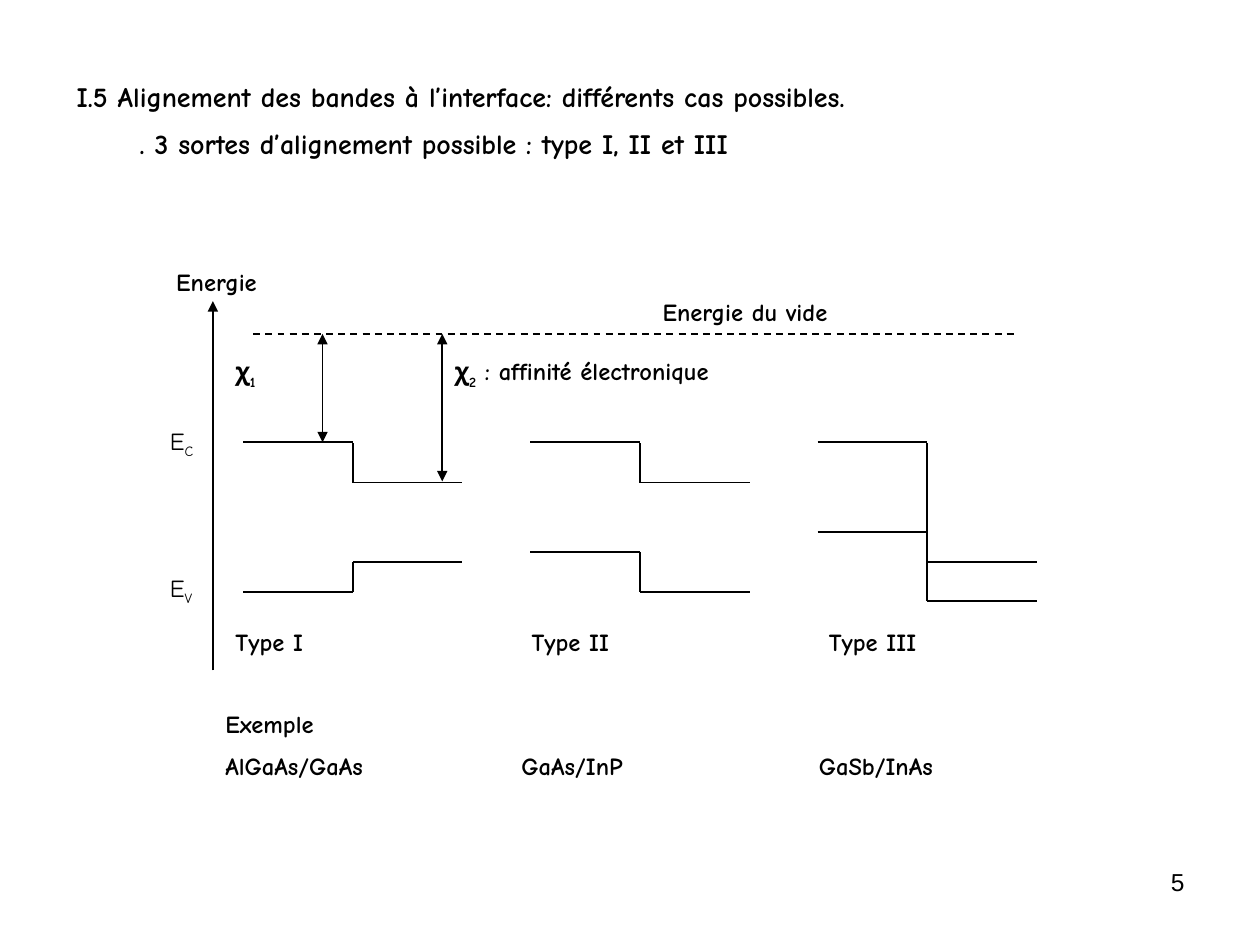
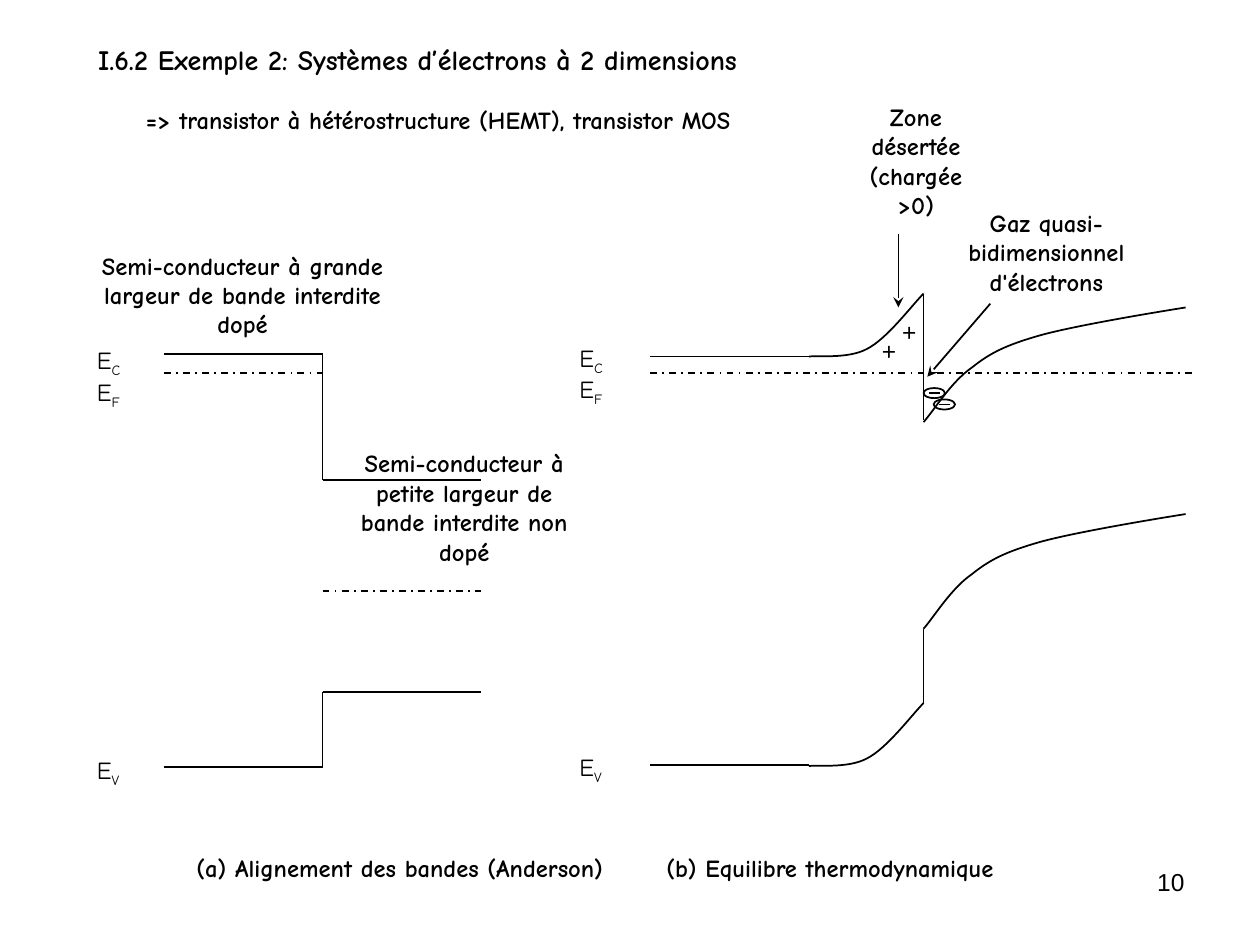
from lxml.etree import SubElement
from pptx import Presentation
from pptx.dml.color import RGBColor
from pptx.enum.dml import MSO_LINE
from pptx.enum.shapes import MSO_CONNECTOR, MSO_SHAPE
from pptx.enum.text import MSO_AUTO_SIZE as AutoSize, PP_ALIGN as Align
from pptx.oxml.ns import qn
from pptx.util import Pt

PX = 9144  # EMU per px, 100 px to the inch
COLORS = {"ink": "000000"}
INK = RGBColor.from_string(COLORS["ink"])
BODY_FONT = "Comic Neue"
PLAIN_FONT = "Arial"
TITLE_SIZE = 16
BODY_SIZE = 14
LINE_WIDTH = Pt(1)


def emu(*lengths):
    return [round(length * PX) for length in lengths]


def add_text(page, place, *lines, size=BODY_SIZE, font=BODY_FONT, bold=True,
             align=Align.LEFT, margin=5, gap=None, indents=(), hanging=0, tabs=(),
             grow=True):
    """Add one paragraph per line; parts between underscores are subscripts.

    gap is the space in points before each later paragraph, half a line if None.
    size may be a tuple, one value per line.
    """
    box = page.shapes.add_textbox(*emu(*place))
    frame = box.text_frame
    frame.word_wrap = True
    frame.auto_size = AutoSize.SHAPE_TO_FIT_TEXT if grow else AutoSize.NONE
    frame.margin_left = frame.margin_right = 2 * margin * PX
    frame.margin_top = frame.margin_bottom = margin * PX
    sizes = size if isinstance(size, tuple) else (size,) * len(lines)
    for index, (line, points) in enumerate(zip(lines, sizes)):
        para = frame.add_paragraph() if index else frame.paragraphs[0]
        para.alignment = align
        properties = para._p.get_or_add_pPr()
        if index and gap is None:
            space = SubElement(properties, qn("a:spcBef"))
            SubElement(space, qn("a:spcPct"), val="50000")
        elif index:
            para.space_before = Pt(gap)
        if indents:
            properties.set("marL", str(indents[index] * PX))
            properties.set("indent", str(-hanging * PX))
        if tabs:
            stops = SubElement(properties, qn("a:tabLst"))
            for tab in tabs:
                SubElement(stops, qn("a:tab"), pos=str(tab * PX), algn="l")
        for part, words in enumerate(line.split("_")):
            if not words:
                continue
            span = para.add_run()
            span.text = words
            span.font.size = Pt(points)
            span.font.name = font
            span.font.bold = bold
            span.font.color.rgb = INK
            if part % 2:
                span._r.get_or_add_rPr().set("baseline", "-25000")


def add_page_number(page, number):
    add_text(page, (717, 683, 233, 52), str(number), font=PLAIN_FONT, bold=False,
             align=Align.RIGHT, grow=False)


def add_level_label(page, left, top, letter):
    add_text(page, (left, top, 42, 33), f"E_{letter}_", bold=False)


def ink_line(line):
    line.color.rgb = INK
    line.width = LINE_WIDTH


def add_line(page, start, end, dash=None, head=None, tail=None):
    connector = page.shapes.add_connector(MSO_CONNECTOR.STRAIGHT, *emu(*start, *end))
    ink_line(connector.line)
    if dash:
        connector.line.dash_style = dash
    properties = connector._element.spPr
    outline = properties.find(qn("a:ln"))
    for tag, kind in (("a:headEnd", head), ("a:tailEnd", tail)):
        if kind:
            SubElement(outline, qn(tag), type=kind)
    SubElement(properties, qn("a:effectLst"))


def add_level(page, left, right, y, dash=None):
    add_line(page, (left, y), (right, y), dash)


def add_wall(page, x, top, bottom):
    add_line(page, (x, top), (x, bottom))


def add_bands(page, left, width, conduction, valence, walls):
    """Draw both band edges on each side of an interface, and its walls."""
    interface = left + width
    for y_left, y_right in (conduction, valence):
        add_level(page, left, interface, y_left)
        add_level(page, interface, interface + width, y_right)
    for top, bottom in walls:
        add_wall(page, interface, top, bottom)


def add_curve(page, knots, drop=0):
    """Draw chained cubic curves through every third knot, moved down by drop."""
    start, *rest = [emu(x, y + drop) for x, y in knots]
    builder = page.shapes.build_freeform(*start)
    builder.add_line_segments(rest, close=False)
    curve = builder.convert_to_shape()
    curve.shadow.inherit = False
    curve.fill.background()
    ink_line(curve.line)
    outline = next(curve._element.iter(qn("a:path")))
    segments = outline.findall(qn("a:lnTo"))
    for first in range(0, len(segments), 3):
        cubic = SubElement(outline, qn("a:cubicBezTo"))
        for segment in segments[first:first + 3]:
            cubic.append(segment[0])
            outline.remove(segment)


def add_electron(page, left, top):
    ellipse = page.shapes.add_shape(MSO_SHAPE.OVAL, *emu(left, top, 17, 8))
    ellipse.shadow.inherit = False
    ellipse.fill.background()
    ink_line(ellipse.line)
    add_level(page, left + 4, left + 13, top + 4)


def add_ion(page, left, top):
    add_text(page, (left, top, 14, 23), "+", font=PLAIN_FONT, bold=False, margin=0)


def build_alignment_types(page):
    add_page_number(page, 5)
    add_text(page, (51, 58, 835, 77),
             "I.5 Alignement des bandes à l’interface: différents cas possibles.",
             ". 3 sortes d’alignement possible : type I, II et III",
             size=TITLE_SIZE, indents=(0, 50))

    add_line(page, (169, 532), (169, 239), tail="triangle")
    add_text(page, (130, 207, 95, 33), "Energie")
    add_level(page, 201, 807, 265, MSO_LINE.DASH)
    add_text(page, (516, 231, 252, 33), "Energie du vide")
    add_level_label(page, 125, 333, "C")
    add_level_label(page, 125, 450, "V")

    types = [((351, 383), (470, 446), [(352, 383), (446, 470)]),
             ((351, 383), (438, 470), [(352, 383), (438, 470)]),
             ((351, 446), (422, 477), [(352, 477)])]
    for column, bands in enumerate(types):
        add_bands(page, 193 + 228 * column, 87, *bands)

    for x, bottom in ((256, 351), (351, 382)):
        add_line(page, (x, bottom), (x, 265), head="triangle", tail="triangle")
    add_text(page, (177, 278, 142, 34), "χ_1_")
    add_text(page, (351, 278, 291, 34), "χ_2_ : affinité électronique")

    columns = (235, 471)
    add_text(page, (177, 493, 638, 33), "Type I\tType II\tType III", tabs=columns)
    add_text(page, (169, 558, 614, 68), "Exemple",
             "AlGaAs/GaAs\tGaAs/InP\tGaSb/InAs", tabs=columns)


def build_electron_gas(page):
    add_page_number(page, 10)
    add_text(page, (68, 29, 874, 84),
             "I.6.2 Exemple 2: Systèmes d’électrons à 2 dimensions",
             "\t=> transistor à hétérostructure (HEMT), transistor MOS",
             size=(TITLE_SIZE, BODY_SIZE), align=Align.JUSTIFY, gap=16.5,
             indents=(38, 38), hanging=38)

    for left, rise in ((67, 0), (450, 2)):
        for letter, top in (("C", 269), ("F", 294), ("V", 594)):
            add_level_label(page, left, top - rise, letter)

    # (a) separate materials
    add_bands(page, 130, 126, (281, 381), (609, 549), [(281, 381), (549, 608)])
    add_level(page, 130, 256, 296, MSO_LINE.DASH_DOT)
    add_level(page, 256, 382, 469, MSO_LINE.DASH_DOT)
    add_text(page, (69, 194, 247, 81),
             "Semi-conducteur à grande largeur de bande interdite dopé", align=Align.CENTER)
    add_text(page, (260, 351, 217, 104),
             "Semi-conducteur à petite largeur de bande interdite non dopé",
             align=Align.CENTER)

    # (b) equilibrium
    depletion = [(642, 283), (649, 282), (673, 285), (688, 277),
                 (704, 269), (724, 242), (733, 233)]
    well = [(941, 244), (922, 247), (855, 258), (826, 266),
            (798, 274), (786, 280), (771, 292), (755, 303), (741, 326), (733, 335)]
    for level, drop_left, drop_right in ((283, 0, 0), (607, 325, 164)):
        add_level(page, 516, 642, level)
        add_curve(page, depletion, drop_left)
        add_curve(page, well, drop_right)
    add_wall(page, 733, 233, 333)
    add_wall(page, 733, 499, 558)
    add_level(page, 516, 949, 296, MSO_LINE.DASH_DOT)

    add_text(page, (673, 76, 108, 104), "Zone désertée (chargée >0)", align=Align.CENTER)
    add_line(page, (713, 186), (713, 244), tail="stealth")
    add_text(page, (744, 160, 173, 81), "Gaz quasi-bidimensionnel d'électrons",
             align=Align.CENTER)
    add_line(page, (786, 241), (736, 299), tail="stealth")
    add_ion(page, 700, 267)
    add_ion(page, 716, 252)
    add_electron(page, 733, 308)
    add_electron(page, 741, 317)

    add_text(page, (146, 672, 685, 33),
             "(a) Alignement des bandes (Anderson)\t(b) Equilibre thermodynamique",
             tabs=(373,))


def main():
    deck = Presentation()
    deck.slide_width, deck.slide_height = emu(1000, 750)
    blank = deck.slide_layouts[6]
    for build in (build_alignment_types, build_electron_gas):
        build(deck.slides.add_slide(blank))
    deck.save("out.pptx")


if __name__ == "__main__":
    main()
